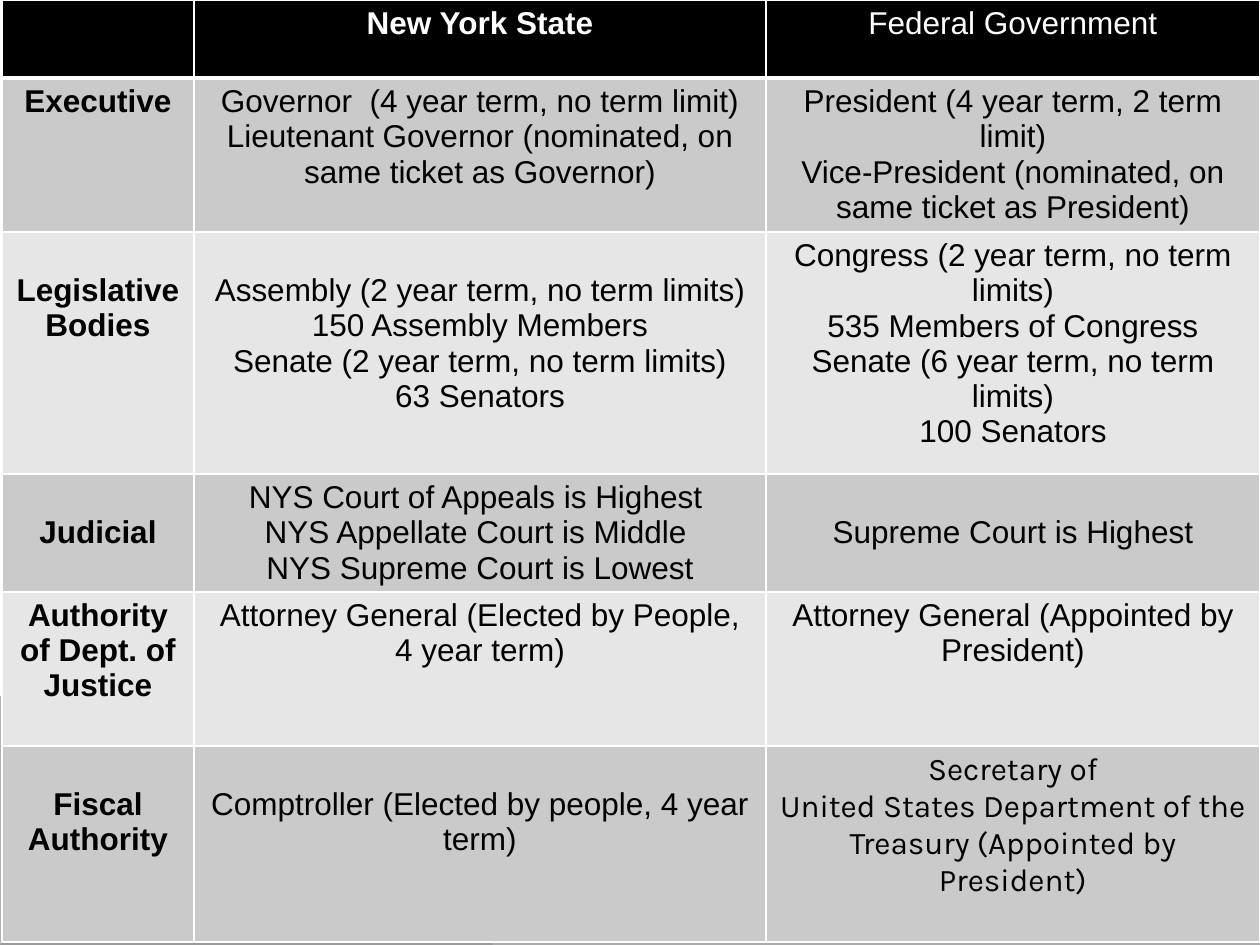
from lxml import etree
from pptx import Presentation
from pptx.dml.color import RGBColor
from pptx.enum.text import PP_ALIGN
from pptx.oxml.ns import qn
from pptx.util import Emu, Pt

CENTER = PP_ALIGN.CENTER
BLACK = RGBColor(0x00, 0x00, 0x00)
WHITE = RGBColor(0xFF, 0xFF, 0xFF)
DARK_BAND = RGBColor(0xCA, 0xCA, 0xCA)
LIGHT_BAND = RGBColor(0xE6, 0xE6, 0xE6)
WEDGE_GRAY = RGBColor(0xB2, 0xB2, 0xB2)
FLOOR_GRAY = RGBColor(0x96, 0x96, 0x96)

EMU_PER_PX = 914400 / 126
WIDTH, HEIGHT = 1260, 945
MARGIN_X, MARGIN_Y = 13, 6
LINE = 35  # height of one text line

COLUMN_WIDTHS = [192, 572, 494]
ROW_HEIGHTS = [78, 154, 242, 118, 154, 196]

# Each cell: its paragraphs
ROWS = [
    [[], ["New York State"], ["Federal Government"]],
    [["Executive"],
     ["Governor  (4 year term, no term limit)",
      "Lieutenant Governor (nominated, on same ticket as Governor)"],
     ["President (4 year term, 2 term limit)",
      "Vice-President (nominated, on same ticket as President)"]],
    [["Legislative Bodies"],
     ["Assembly (2 year term, no term limits)", "150 Assembly Members",
      "Senate (2 year term, no term limits)", "63 Senators"],
     ["Congress (2 year term, no term limits)", "535 Members of Congress",
      "Senate (6 year term, no term limits)", "100 Senators"]],
    [["Judicial"],
     ["NYS Court of Appeals is Highest ", "NYS Appellate Court is Middle ",
      "NYS Supreme Court is Lowest"],
     ["Supreme Court is Highest"]],
    [["Authority of Dept. of Justice"],
     ["Attorney General (Elected by People, 4 year term)"],
     ["Attorney General (Appointed by President)"]],
    [["Fiscal Authority"],
     ["Comptroller (Elected by people, 4 year term)"],
     ["Secretary of",
      "United States Department of the Treasury (Appointed by President)"]],
]
LOWERED = {(2, 0), (2, 1), (3, 0), (3, 2), (5, 0), (5, 1)}  # start one line down
TREASURY = (5, 2)


def px(value):
    return Emu(round(value * EMU_PER_PX))


class SlideBuilder:
    font = "Arial"
    accent_font = "Karla"
    size = Pt(18)

    def __init__(self, slide):
        self.slide = slide

    def polygon(self, points, color, opacity=100):
        builder = self.slide.shapes.build_freeform(*points[0], scale=EMU_PER_PX)
        builder.add_line_segments(points[1:], close=True)
        shape = builder.convert_to_shape()
        shape.shadow.inherit = False
        shape.fill.solid()
        shape.fill.fore_color.rgb = color
        shape.line.fill.background()
        if opacity < 100:
            rgb = shape.fill._xPr.find(qn("a:solidFill"))[0]
            etree.SubElement(rgb, qn("a:alpha"), val=str(opacity * 1000))

    def table(self, left, top, widths, heights, rows):
        table = self.slide.shapes.add_table(
            len(heights), len(widths), px(left), px(top),
            px(sum(widths)), px(sum(heights))).table
        for column, width in zip(table.columns, widths):
            column.width = px(width)
        for r, (height, row) in enumerate(zip(heights, rows)):
            table.rows[r].height = px(height)
            for c, lines in enumerate(row):
                self.cell(table.cell(r, c), r, c, lines)

    def cell(self, cell, r, c, lines):
        header = r == 0
        cell.margin_left = cell.margin_right = px(MARGIN_X)
        cell.margin_top = px(MARGIN_Y + LINE * ((r, c) in LOWERED))
        cell.margin_bottom = px(MARGIN_Y)
        cell.fill.solid()
        cell.fill.fore_color.rgb = BLACK if header else (DARK_BAND if r % 2 else LIGHT_BAND)
        self.borders(cell, top=3 if r == 1 else 1, bottom=3 if header else 1)
        cell.text_frame.text = "\n".join(lines)
        for paragraph in cell.text_frame.paragraphs:
            paragraph.alignment = CENTER
            for run in paragraph.runs:
                run.font.name = self.accent_font if (r, c) == TREASURY else self.font
                run.font.size = self.size
                run.font.bold = c == 0 or (header and c == 1)
                run.font.color.rgb = WHITE if header else BLACK

    def borders(self, cell, top, bottom):
        properties = cell._tc.get_or_add_tcPr()
        sides = [("a:lnL", 1), ("a:lnR", 1), ("a:lnT", top), ("a:lnB", bottom)]
        for index, (tag, points) in enumerate(sides):
            line = etree.Element(qn(tag), w=str(Pt(points)))
            fill = etree.SubElement(line, qn("a:solidFill"))
            etree.SubElement(fill, qn("a:srgbClr"), val=str(WHITE))
            properties.insert(index, line)


def main():
    presentation = Presentation()
    presentation.slide_width = px(WIDTH)
    presentation.slide_height = px(HEIGHT)
    builder = SlideBuilder(
        presentation.slides.add_slide(presentation.slide_layouts[6]))

    # Gray backdrop along the bottom
    builder.polygon([(0, 945), (0, 696), (281, 696), (493, 945)], WEDGE_GRAY)
    builder.polygon([(0, 945), (281, 696), (1260, 697), (1260, 945)], FLOOR_GRAY, opacity=80)

    # State and federal comparison
    builder.table(2, 0, COLUMN_WIDTHS, ROW_HEIGHTS, ROWS)

    presentation.save("out.pptx")


if __name__ == "__main__":
    main()
